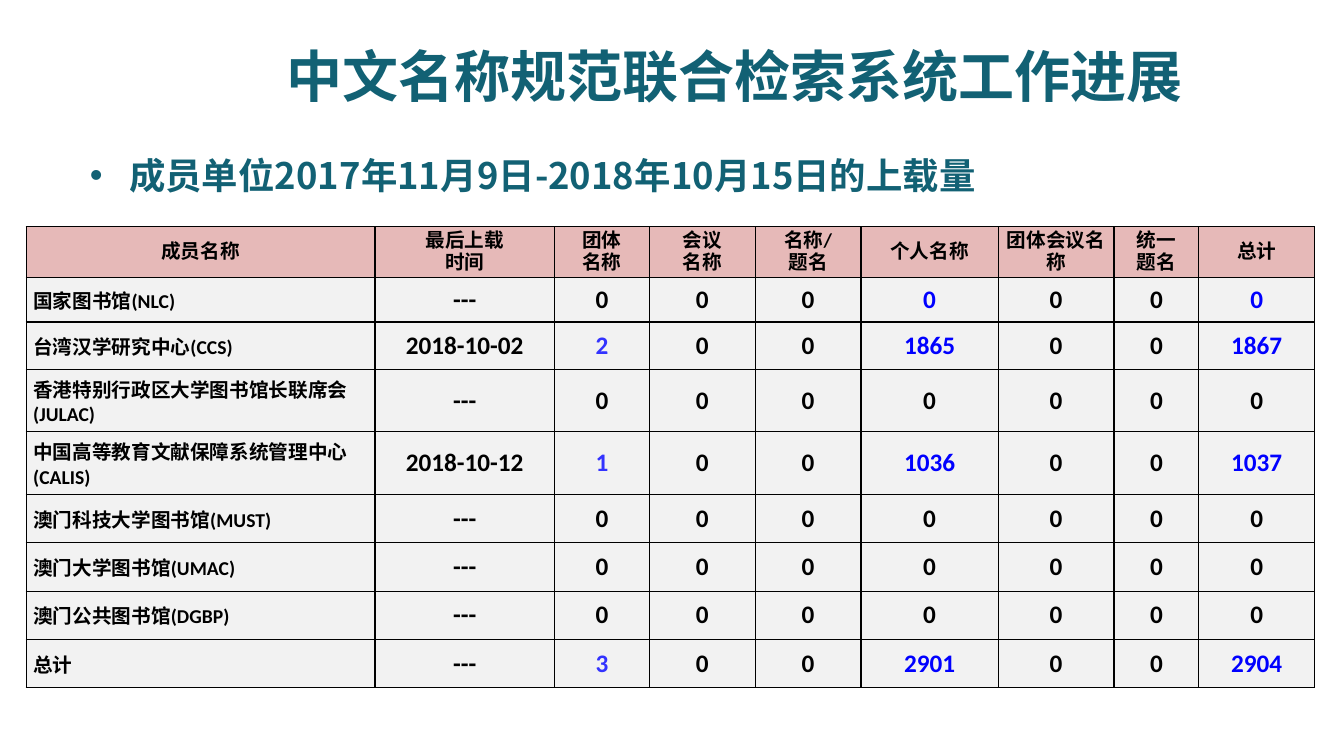
"""Build the upload progress slide of the Chinese name authority search system."""
from lxml.etree import SubElement
from pptx import Presentation
from pptx.dml.color import RGBColor
from pptx.enum.text import MSO_ANCHOR, PP_ALIGN
from pptx.oxml.ns import qn
from pptx.util import Inches, Pt

TITLE = "中文名称规范联合检索系统工作进展"
SUBTITLE = "成员单位2017年11月9日-2018年10月15日的上载量"
HEADERS = ["成员名称", "最后上载\n时间", "团体\n名称", "会议\n名称", "名称/\n题名",
           "个人名称", "团体会议名称", "统一\n题名", "总计"]
MEMBERS = [
    ("国家图书馆(NLC)", "---", 0, 0, 0, 0, 0, 0, 0),
    ("台湾汉学研究中心(CCS)", "2018-10-02", 2, 0, 0, 1865, 0, 0, 1867),
    ("香港特别行政区大学图书馆长联席会(JULAC)", "---", 0, 0, 0, 0, 0, 0, 0),
    ("中国高等教育文献保障系统管理中心(CALIS)", "2018-10-12", 1, 0, 0, 1036, 0, 0, 1037),
    ("澳门科技大学图书馆(MUST)", "---", 0, 0, 0, 0, 0, 0, 0),
    ("澳门大学图书馆(UMAC)", "---", 0, 0, 0, 0, 0, 0, 0),
    ("澳门公共图书馆(DGBP)", "---", 0, 0, 0, 0, 0, 0, 0),
    ("总计", "---", 3, 0, 0, 2901, 0, 0, 2904),
]
COLUMN_WIDTHS = [3.46, 1.78, 0.94, 1.05, 1.05, 1.36, 1.15, 0.84, 1.15]
ROW_HEIGHTS = [0.34, 0.44, 0.47, 0.54, 0.55] + [0.48] * 4
GROUP_COLUMN, PERSON_COLUMN, TOTAL_COLUMN = 2, 5, 8
HIGHLIGHTED_ZEROS = {(1, PERSON_COLUMN), (1, TOTAL_COLUMN)}
CJK_FONT, TABLE_FONT = "Noto Sans CJK SC", "Calibri"
TEAL, BLACK, BLUE, VIOLET = "126174", "000000", "0000FF", "3333FF"
HEADER_FILL, BODY_FILL = "E6B9B8", "F2F2F2"


def color(value):
    return RGBColor.from_string(value)


def set_font(paragraph, name, size, value):
    font = paragraph.font
    font.name, font.size, font.bold = name, Pt(size), True
    font.color.rgb = color(value)
    east_asian = SubElement(paragraph._p.pPr.find(qn("a:defRPr")), qn("a:ea"))
    east_asian.set("typeface", CJK_FONT)


def place(shape, left, top, width, height):
    shape.left, shape.top = Inches(left), Inches(top)
    shape.width, shape.height = Inches(width), Inches(height)


def set_borders(cell):
    properties = cell._tc.get_or_add_tcPr()
    for position, side in enumerate(("a:lnL", "a:lnR", "a:lnT", "a:lnB")):
        line = properties.makeelement(qn(side), {"w": str(Pt(1))})
        properties.insert(position, line)
        fill = SubElement(line, qn("a:solidFill"))
        SubElement(fill, qn("a:srgbClr")).set("val", BLACK)


def number_color(row, column, value):
    if column < GROUP_COLUMN or not (value or (row, column) in HIGHLIGHTED_ZEROS):
        return BLACK
    return VIOLET if column == GROUP_COLUMN else BLUE


def fill_cell(cell, row, column, value):
    header, label = row == 0, column == 0
    if header:
        margins = (0.05, 0.04, 0.05, 0.02)
    else:
        margins = (0.07, 0.05, 0.07, 0.05) if label else (0, 0, 0, 0)
    cell.margin_left, cell.margin_top, cell.margin_right, cell.margin_bottom = map(Inches, margins)
    cell.vertical_anchor = MSO_ANCHOR.MIDDLE
    cell.fill.solid()
    cell.fill.fore_color.rgb = color(HEADER_FILL if header else BODY_FILL)
    set_borders(cell)
    cell.text = str(value)
    for paragraph in cell.text_frame.paragraphs:
        paragraph.alignment = PP_ALIGN.LEFT if label and not header else PP_ALIGN.CENTER
        if header:
            paragraph.line_spacing = Pt(16)
        text_color = BLACK if header else number_color(row, column, value)
        set_font(paragraph, TABLE_FONT, 14 if header or label else 18, text_color)


def add_upload_table(slide):
    rows = [HEADERS, *MEMBERS]
    table = slide.shapes.add_table(
        len(rows), len(HEADERS), Inches(0.26), Inches(2.25),
        Inches(sum(COLUMN_WIDTHS)), Inches(sum(ROW_HEIGHTS))).table
    for column, width in zip(table.columns, COLUMN_WIDTHS):
        column.width = Inches(width)
    for row, height in zip(table.rows, ROW_HEIGHTS):
        row.height = Inches(height)
    for row, values in enumerate(rows):
        for column, value in enumerate(values):
            fill_cell(table.cell(row, column), row, column, value)


def main():
    presentation = Presentation()
    presentation.slide_width, presentation.slide_height = Inches(13.33), Inches(7.5)
    slide = presentation.slides.add_slide(presentation.slide_layouts[1])

    title = slide.shapes.title
    place(title, 2.28, 0.2, 10.01, 1.09)
    title.text_frame.text = TITLE
    heading = title.text_frame.paragraphs[0]
    heading.alignment = PP_ALIGN.CENTER
    set_font(heading, CJK_FONT, 40, TEAL)

    body = slide.placeholders[1]
    place(body, 0.79, 1.47, 11.97, 0.87)
    body.text_frame.text = SUBTITLE
    bullet = body.text_frame.paragraphs[0]
    bullet.space_before = Pt(0)
    properties = bullet._p.get_or_add_pPr()
    properties.set("marL", str(Inches(0.39)))
    properties.set("indent", str(-Inches(0.39)))
    SubElement(properties, qn("a:buChar")).set("char", "•")
    set_font(bullet, CJK_FONT, 26, TEAL)

    add_upload_table(slide)
    presentation.save("out.pptx")


if __name__ == "__main__":
    main()
